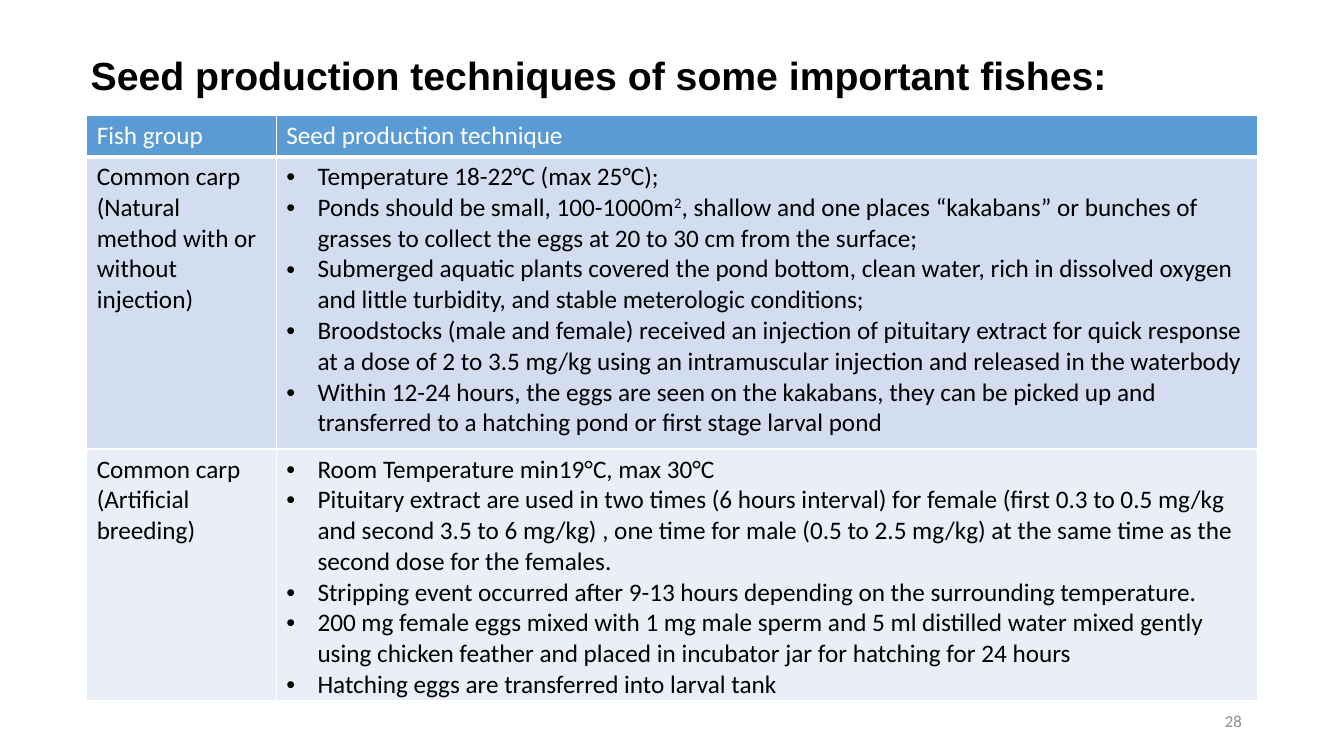
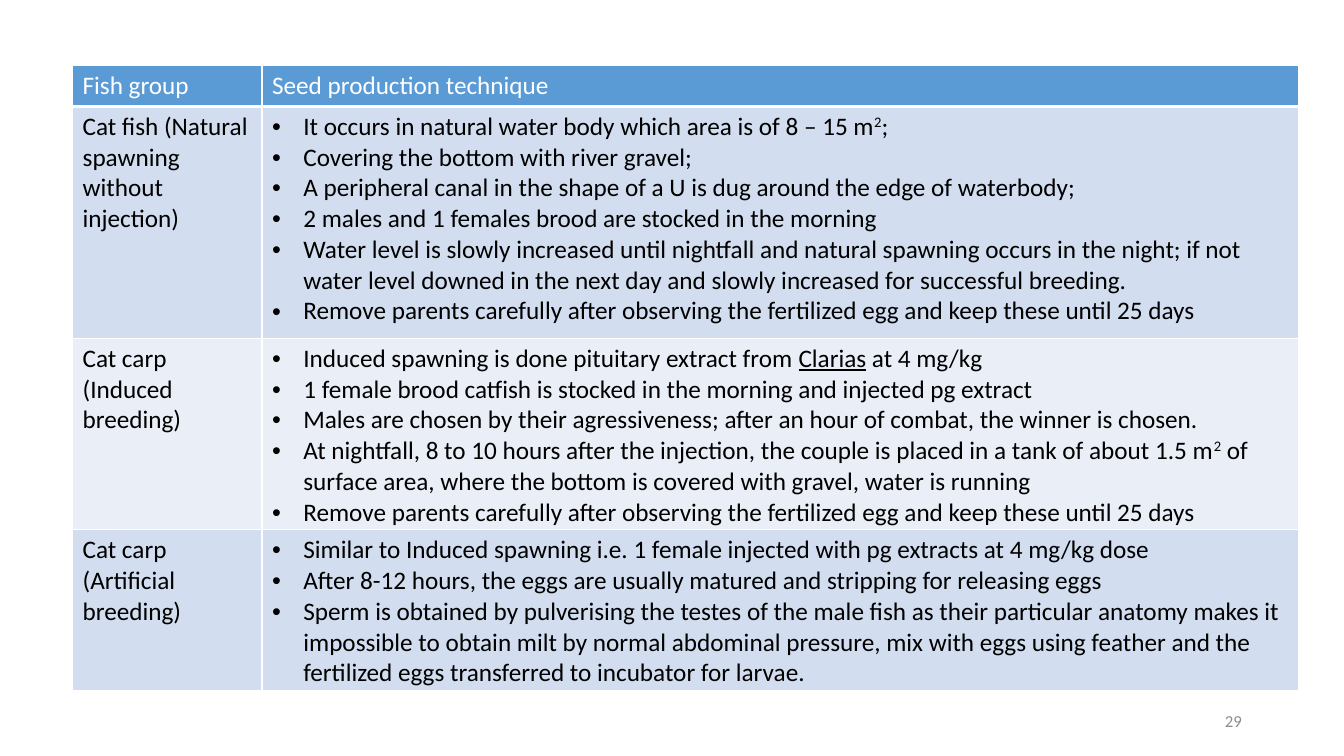
from dataclasses import dataclass

from lxml.etree import SubElement
from pptx import Presentation
from pptx.dml.color import RGBColor as Color
from pptx.enum.text import MSO_ANCHOR as Anchor, MSO_AUTO_SIZE as AutoSize, PP_ALIGN as Align
from pptx.oxml.ns import qn
from pptx.util import Inches, Pt

TITLE_ONLY, BLANK = 5, 6
FIRST_NUMBER = 28
HEADINGS = ("Fish group", "Seed production technique")


@dataclass(frozen=True)
class Theme:
    heading_font: str = "Arial"
    body_font: str = "Calibri"
    title_size: int = 28
    body_size: int = 18
    number_size: int = 12
    ink: str = "000000"
    number: str = "8C8C8C"
    line: str = "FFFFFF"
    header: str = "5B9BD5"
    header_text: str = "FFFFFF"
    bands: tuple = ("D2DEEF", "EAEFF7")
    thin: int = 1
    thick: int = 3
    indent: float = 0.31


def set_all(target, values):
    for name, value in values.items():
        setattr(target, name, value)


class Deck:
    """Holds the style and current slide; lengths are in a grid of 100 columns by 100 rows."""

    def __init__(self, theme):
        self.theme = theme
        self.presentation = Presentation()
        set_all(self.presentation, {"slide_width": Inches(13.33), "slide_height": Inches(7.5)})
        self.slide = None

    def columns(self, count):
        return round(self.presentation.slide_width * count / 100)

    def rows(self, count):
        return round(self.presentation.slide_height * count / 100)

    def box(self, left, top, width, height):
        return self.columns(left), self.rows(top), self.columns(width), self.rows(height)

    def add_slide(self, layout):
        self.slide = self.presentation.slides.add_slide(self.presentation.slide_layouts[layout])

    def add_text(self, paragraph, text, color, size, font=None, bold=False):
        """Split text at bars; a part led by ^ is raised, one led by _ is underlined."""
        for part in text.split("|"):
            run = paragraph.add_run()
            run.text = part.lstrip("^_")
            set_all(run.font, {"name": font or self.theme.body_font, "size": Pt(size), "bold": bold})
            run.font.color.rgb = Color.from_string(color)
            if part.startswith("^"):
                run.font._element.set("baseline", "30000")
            if part.startswith("_"):
                run.font.underline = True

    def title(self, text):
        title = self.slide.shapes.title
        left, top, width, height = self.box(6, 6.13, 84.45, 7.6)
        set_all(title, {"left": left, "top": top, "width": width, "height": height})
        set_all(title.text_frame, {"word_wrap": True, "vertical_anchor": Anchor.TOP,
                                   "auto_size": AutoSize.SHAPE_TO_FIT_TEXT})
        paragraph = title.text_frame.paragraphs[0]
        paragraph.alignment = Align.LEFT
        self.add_text(paragraph, text, self.theme.ink, self.theme.title_size,
                      self.theme.heading_font, bold=True)

    def slide_number(self, number):
        frame = self.slide.shapes.add_textbox(*self.box(70.65, 92.67, 22.5, 5.33)).text_frame
        set_all(frame, {"word_wrap": True, "vertical_anchor": Anchor.MIDDLE})
        paragraph = frame.paragraphs[0]
        paragraph.alignment = Align.RIGHT
        self.add_text(paragraph, str(number), self.theme.number, self.theme.number_size)

    def bullet(self, paragraph):
        properties = paragraph._p.get_or_add_pPr()
        indent = Inches(self.theme.indent)
        properties.set("marL", str(indent))
        properties.set("indent", str(-indent))
        SubElement(properties, qn("a:buFont"), typeface=self.theme.heading_font)
        SubElement(properties, qn("a:buChar"), char="•")

    def borders(self, cell, bottom):
        properties = cell._tc.get_or_add_tcPr()
        widths = {"L": self.theme.thin, "R": self.theme.thin, "T": self.theme.thin, "B": bottom}
        for side, width in widths.items():
            line = SubElement(properties, qn(f"a:ln{side}"), w=str(Pt(width)))
            SubElement(SubElement(line, qn("a:solidFill")), qn("a:srgbClr"), val=self.theme.line)

    def cell(self, cell, lines, fill, color, bottom, bulleted=False):
        self.borders(cell, bottom)
        cell.fill.solid()
        cell.fill.fore_color.rgb = Color.from_string(fill)
        frame = cell.text_frame
        for index, text in enumerate(lines):
            paragraph = frame.add_paragraph() if index else frame.paragraphs[0]
            if bulleted:
                self.bullet(paragraph)
            self.add_text(paragraph, text, color, self.theme.body_size)

    def technique_table(self, left, top, widths, heights, groups):
        """Draw a header row, then one banded row for each (name lines, technique points) pair."""
        theme = self.theme
        table = self.slide.shapes.add_table(
            len(heights), len(widths), *self.box(left, top, sum(widths), sum(heights))).table
        table.horz_banding = False
        for column, width in zip(table.columns, widths):
            column.width = self.columns(width)
        for row, height in zip(table.rows, heights):
            row.height = self.rows(height)
        for index, heading in enumerate(HEADINGS):
            self.cell(table.cell(0, index), [heading], theme.header, theme.header_text, theme.thick)
        for row, group in enumerate(groups, start=1):
            fill = theme.bands[(row - 1) % len(theme.bands)]
            for index, lines in enumerate(group):
                self.cell(table.cell(row, index), lines, fill, theme.ink, theme.thin,
                          bulleted=index == 1)


CARP = [
    (["Common carp", "(Natural method with or without injection)"], [
        "Temperature 18-22°C (max 25°C);",
        "Ponds should be small, 100-1000m|^2|, shallow and one places “kakabans” or bunches of "
        "grasses to collect the eggs at 20 to 30 cm from the surface;",
        "Submerged aquatic plants covered the pond bottom, clean water, rich in dissolved oxygen "
        "and little turbidity, and stable meterologic conditions;",
        "Broodstocks (male and female) received an injection of pituitary extract for quick "
        "response at a dose of 2 to 3.5 mg/kg using an intramuscular injection and released in "
        "the waterbody",
        "Within 12-24 hours, the eggs are seen on the kakabans, they can be picked up and "
        "transferred to a hatching pond or first stage larval pond",
    ]),
    (["Common carp", "(Artificial breeding)"], [
        "Room Temperature min19°C, max 30°C",
        "Pituitary extract are used in two times (6 hours interval) for female (first 0.3 to 0.5 "
        "mg/kg and second 3.5 to 6 mg/kg) , one time for male (0.5 to 2.5 mg/kg) at the same time "
        "as the second dose for the females.",
        "Stripping event occurred after 9-13 hours depending on the surrounding temperature.",
        "200 mg female eggs mixed with 1 mg male sperm and 5 ml distilled water mixed gently "
        "using chicken feather and placed in incubator jar for hatching for 24 hours",
        "Hatching eggs are transferred into larval tank",
    ]),
]
REMOVE_PARENTS = ("Remove parents carefully after observing the fertilized egg and keep these "
                  "until 25 days")
CATFISH = [
    (["Cat fish (Natural spawning without injection)"], [
        "It occurs in natural water body which area is of 8 – 15 m|^2|;",
        "Covering the bottom with river gravel;",
        "A peripheral canal in the shape of a U is dug around the edge of waterbody;",
        "2 males and 1 females brood are stocked in the morning",
        "Water level is slowly increased until nightfall and natural spawning occurs in the "
        "night; if not water level downed in the next day and slowly increased for successful "
        "breeding.",
        REMOVE_PARENTS,
    ]),
    (["Cat carp", "(Induced breeding)"], [
        "Induced spawning is done pituitary extract from |_Clarias| at 4 mg/kg",
        "1 female brood catfish is stocked in the morning and injected pg extract",
        "Males are chosen by their agressiveness; after an hour of combat, the winner is chosen.",
        "At nightfall, 8 to 10 hours after the injection, the couple is placed in a tank of about "
        "1.5 m|^2| of surface area, where the bottom is covered with gravel, water is running",
        REMOVE_PARENTS,
    ]),
    (["Cat carp", "(Artificial breeding)"], [
        "Similar to Induced spawning i.e. 1 female injected with pg extracts at 4 mg/kg dose",
        "After 8-12 hours, the eggs are usually matured and stripping for releasing eggs",
        "Sperm is obtained by pulverising the testes of the male fish as their particular anatomy "
        "makes it impossible to obtain milt by normal abdominal pressure, mix with eggs using "
        "feather and the fertilized eggs transferred to incubator for larvae.",
    ]),
]


def main():
    deck = Deck(Theme())

    deck.add_slide(TITLE_ONLY)
    deck.slide_number(FIRST_NUMBER)
    deck.title("Seed production techniques of some important fishes:")
    deck.technique_table(6.45, 15.33, (14.1, 73), (5.4, 38.67, 33.33), CARP)

    deck.add_slide(BLANK)
    deck.slide_number(FIRST_NUMBER + 1)
    deck.technique_table(5.4, 8.67, (14.1, 77.1), (5.4, 30.67, 25.33, 21.33), CATFISH)

    deck.presentation.save("out.pptx")


if __name__ == "__main__":
    main()
